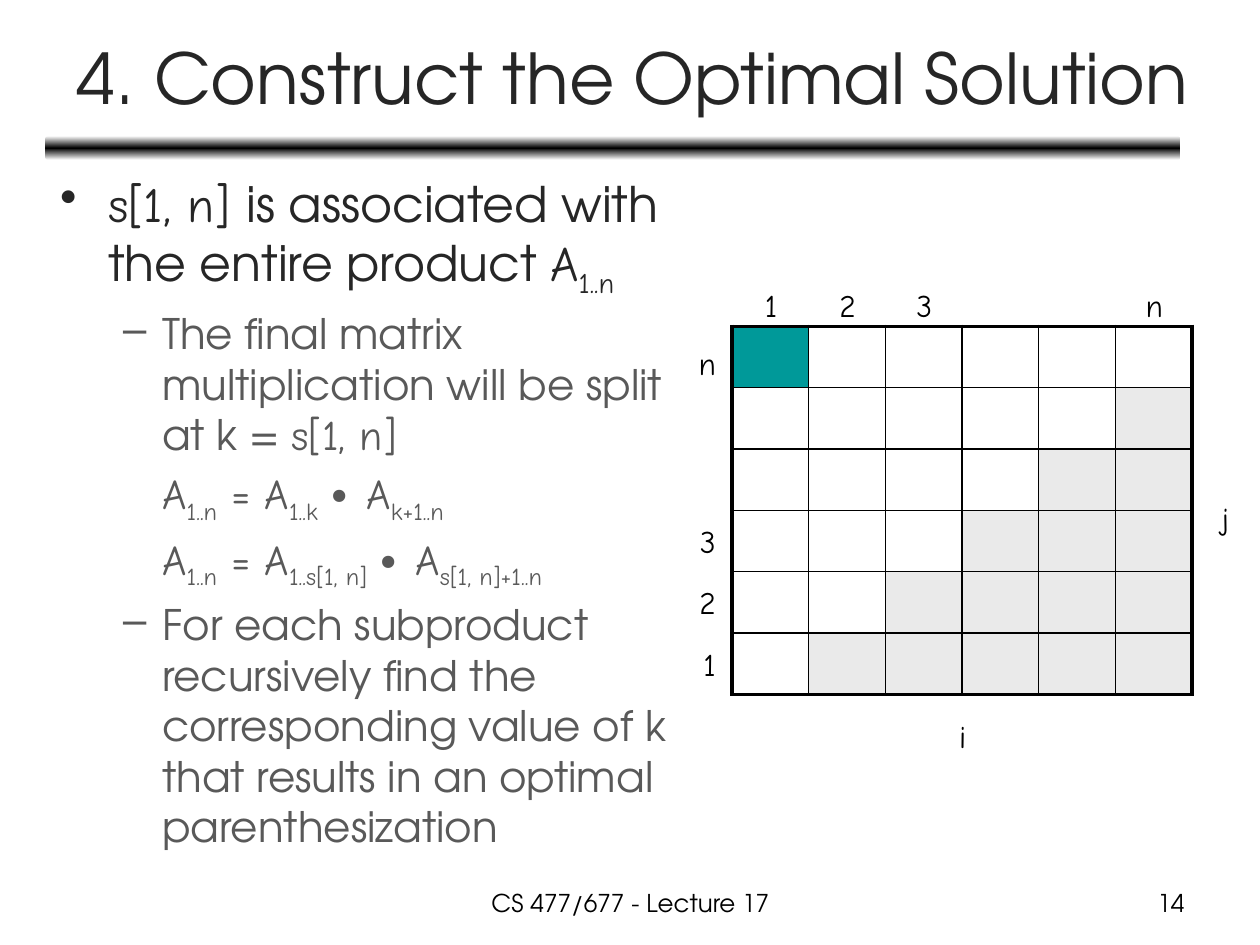
from lxml import etree
from pptx import Presentation
from pptx.dml.color import RGBColor
from pptx.enum.shapes import MSO_SHAPE as SHAPE
from pptx.enum.text import MSO_ANCHOR as ANCHOR, PP_ALIGN as ALIGN
from pptx.oxml.ns import qn
from pptx.util import Inches, Pt

BLACK = RGBColor(0x00, 0x00, 0x00)
WHITE = RGBColor(0xFF, 0xFF, 0xFF)
DARK = RGBColor(0x26, 0x26, 0x26)
GRAY = RGBColor(0x59, 0x59, 0x59)
TEAL = RGBColor(0x00, 0x99, 0x99)
SHADE = RGBColor(0xEA, 0xEA, 0xEA)
SANS = "TeX Gyre Adventor"
HAND = "Comic Neue"
SUB = "sub"
N = 6

# Each paragraph: level, bullet, runs of (text, font, optional SUB)
BODY = [
    (0, "•", [("s[1, n] ", HAND), ("is associated with the entire product ", SANS),
              ("A", HAND), ("1..n", HAND, SUB)]),
    (1, "–", [("The final matrix multiplication will be split at k = ", SANS),
              ("s[1, n]", HAND)]),
    (1, None, [("A", HAND), ("1..n", HAND, SUB), (" = A", HAND), ("1..k ", HAND, SUB),
               ("∙ A", HAND), ("k+1..n", HAND, SUB)]),
    (1, None, [("A", HAND), ("1..n", HAND, SUB), (" = A", HAND), ("1..s[1, n] ", HAND, SUB),
               ("∙ A", HAND), ("s[1, n]+1..n", HAND, SUB)]),
    (1, "–", [("For each subproduct recursively find the corresponding value of k "
               "that results in an optimal parenthesization", SANS)]),
]
# Level: size, colour, left margin, hanging indent
LEVELS = [(28, DARK, 0.38, 0.38), (24, GRAY, 0.81, 0.31)]


def add_run(p, text, font, size, color, script=None):
    r = p.add_run()
    r.text = text
    r.font.name, r.font.size, r.font.color.rgb = font, Pt(size), color
    if script == SUB:
        r.font._element.set("baseline", "-25000")


def add_box(slide, box, wrap=True):
    tf = slide.shapes.add_textbox(*map(Inches, box)).text_frame
    tf.word_wrap = wrap
    return tf


def add_line_of_text(slide, box, text, font, size, color, align, anchor=ANCHOR.TOP):
    tf = add_box(slide, box)
    tf.vertical_anchor = anchor
    p = tf.paragraphs[0]
    p.alignment = align
    add_run(p, text, font, size, color)


def add_rule(slide, box):
    """Bar under the title, fading from black to white at both edges."""
    sp = slide.shapes.add_shape(SHAPE.ROUNDED_RECTANGLE, *map(Inches, box))
    sp.shadow.inherit = False
    sp.line.fill.background()
    sp.fill.gradient()
    sp.fill.gradient_angle = 270
    stops = sp.fill._fill._gradFill.find(qn("a:gsLst"))
    for stop in list(stops):
        stops.remove(stop)
    for pos, color in ((0, WHITE), (50000, BLACK), (100000, WHITE)):
        stop = etree.SubElement(stops, qn("a:gs"), pos=str(pos))
        etree.SubElement(stop, qn("a:srgbClr"), val=str(color))


def add_body(slide, box):
    tf = add_box(slide, box)
    for i, (level, bullet, runs) in enumerate(BODY):
        size, color, margin, hang = LEVELS[level]
        p = tf.paragraphs[0] if i == 0 else tf.add_paragraph()
        p.level = level
        pPr = p._p.get_or_add_pPr()
        pPr.set("marL", str(Inches(margin)))
        pPr.set("indent", str(-Inches(hang) if bullet else 0))
        before = etree.SubElement(pPr, qn("a:spcBef"))
        etree.SubElement(before, qn("a:spcPct"), val="20000")
        if bullet:
            etree.SubElement(pPr, qn("a:buChar"), char=bullet)
        else:
            etree.SubElement(pPr, qn("a:buNone"))
        for text, font, *script in runs:
            add_run(p, text, font, size, color, *script)


def set_borders(cell, widths):
    tcPr = cell._tc.get_or_add_tcPr()
    for i, (side, width) in enumerate(widths.items()):
        ln = etree.Element(qn("a:ln" + side), w=str(Pt(width)))
        fill = etree.SubElement(ln, qn("a:solidFill"))
        etree.SubElement(fill, qn("a:srgbClr"), val=str(BLACK))
        tcPr.insert(i, ln)


def add_matrix(slide, box):
    """Grid with a shaded lower triangle, index labels and axis names."""
    left, top, width, height = box
    table = slide.shapes.add_table(N, N, *map(Inches, box)).table
    table.first_row = table.horz_banding = False
    for row in range(N):
        for col in range(N):
            cell = table.cell(row, col)
            if row == col == 0:
                cell.fill.solid()
                cell.fill.fore_color.rgb = TEAL
            elif row + col >= N:
                cell.fill.solid()
                cell.fill.fore_color.rgb = SHADE
            else:
                cell.fill.background()
            outer = {"L": col == 0, "R": col == N - 1, "T": row == 0, "B": row == N - 1}
            set_borders(cell, {s: 2.25 if edge else 1 for s, edge in outer.items()})

    def label(text, x, y, align=ALIGN.CENTER):
        add_line_of_text(slide, (x, y, 0.35, 0.4), text, HAND, 18, BLACK, align)

    # Column labels above, row labels on the left
    for text, col in (("1", 0), ("2", 1), ("3", 2), ("n", 5)):
        label(text, left + (col + 0.5) * width / N - 0.17, top - 0.37)
    for text, row in (("n", 0.1), ("3", 3), ("2", 4), ("1", 5)):
        label(text, left - 0.38, top + (row + 0.5) * height / N - 0.2, ALIGN.RIGHT)
    # Axis names
    label("j", left + width + 0.09, top + 1.32)
    label("i", left + width / 2 - 0.17, top + height + 0.13)


def add_footer(slide, box):
    left, top, width, height = box
    add_line_of_text(slide, (left, top, 3.17, height), "CS 477/677 - Lecture 17",
                     SANS, 14, BLACK, ALIGN.CENTER)
    add_line_of_text(slide, (left + width - 2.33, top, 2.33, height), "14",
                     SANS, 14, BLACK, ALIGN.RIGHT)


def main():
    prs = Presentation()
    prs.slide_width, prs.slide_height = Inches(10), Inches(7.5)
    slide = prs.slides.add_slide(prs.slide_layouts[6])
    add_rule(slide, (0.36, 1.08, 9.01, 0.19))
    add_line_of_text(slide, (0.37, 0.11, 9.3, 0.99), "4. Construct the Optimal Solution",
                     SANS, 40, DARK, ALIGN.CENTER, ANCHOR.MIDDLE)
    add_body(slide, (0.38, 1.33, 5.3, 5.91))
    add_matrix(slide, (5.81, 2.59, 3.65, 2.92))
    add_footer(slide, (3.42, 7, 6.08, 0.35))
    prs.save("out.pptx")


if __name__ == "__main__":
    main()
